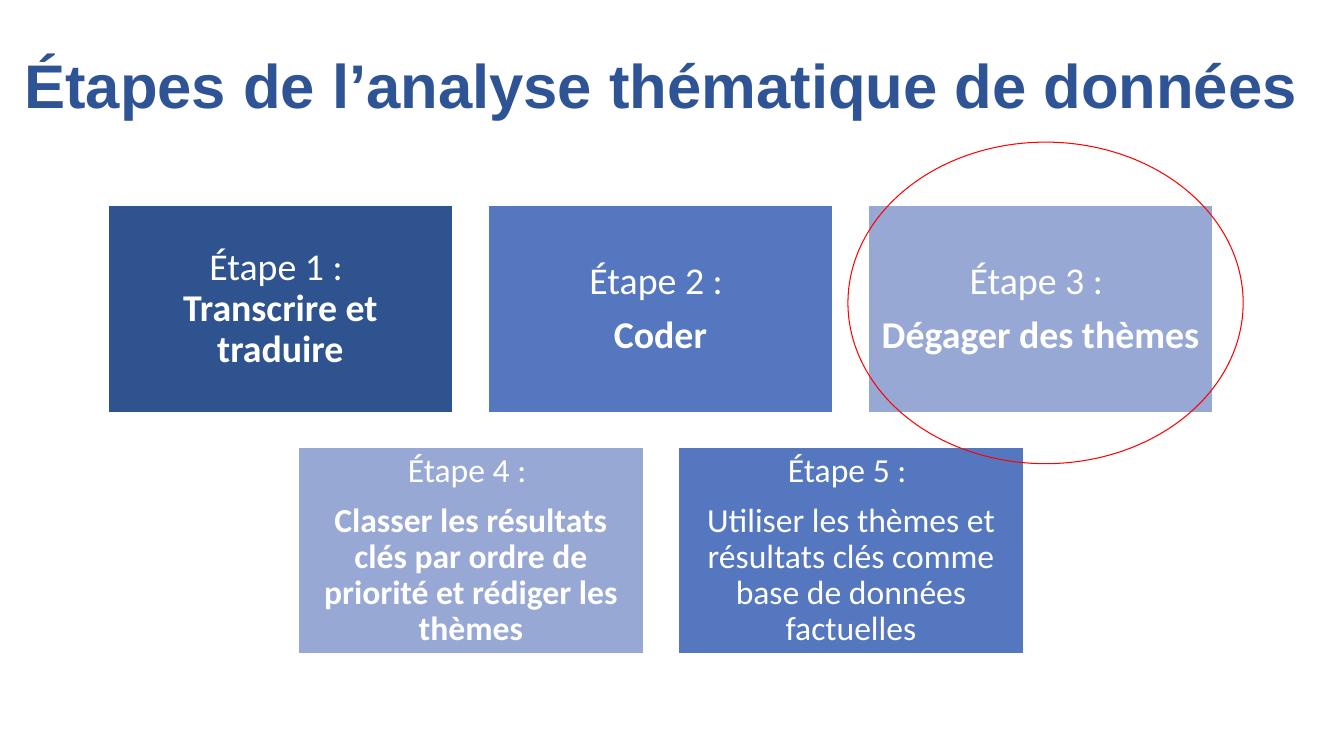
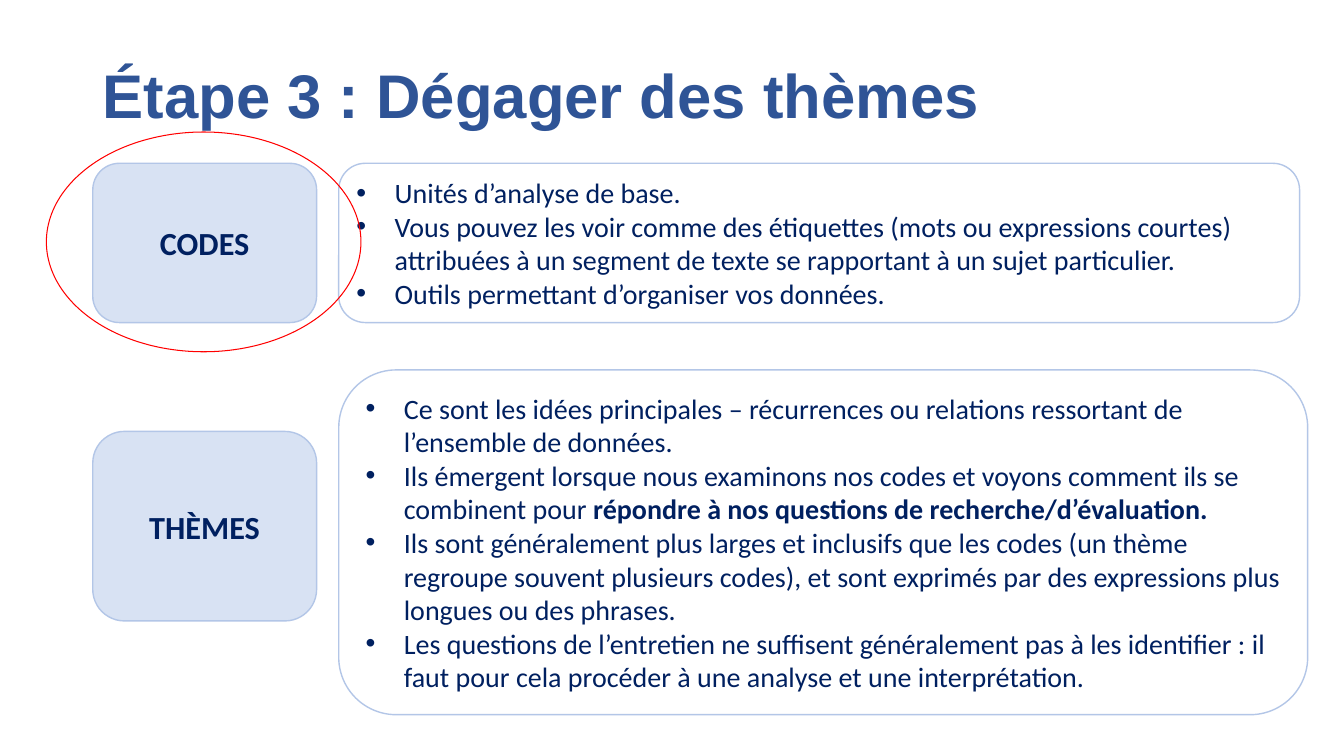
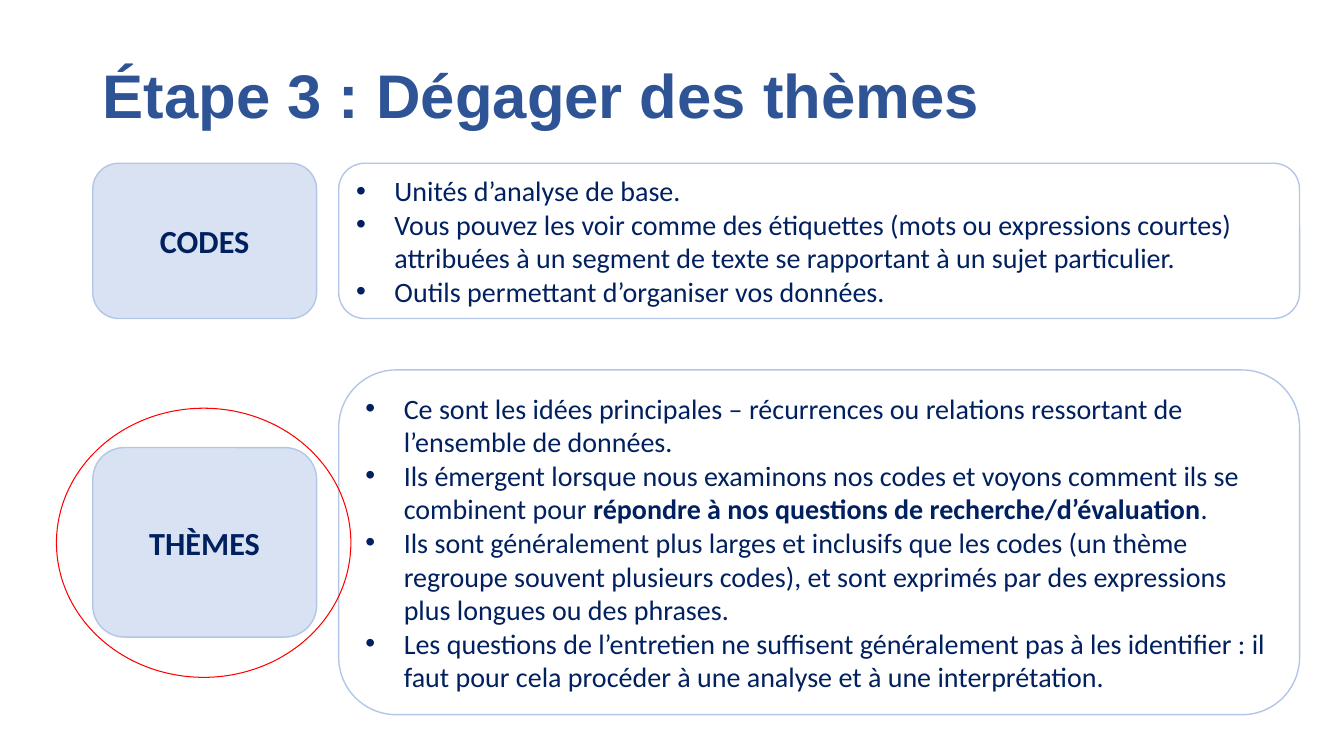
from dataclasses import dataclass

from lxml import etree
from pptx import Presentation
from pptx.dml.color import RGBColor
from pptx.enum.shapes import MSO_SHAPE
from pptx.enum.text import MSO_ANCHOR, MSO_AUTO_SIZE, PP_ALIGN
from pptx.oxml.ns import qn
from pptx.util import Pt

# Scale: 100 px to the inch
EMU_PER_PX = 9144
SLIDE_WIDTH, SLIDE_HEIGHT = 1333, 750
TITLE_ONLY_LAYOUT = 5

# Shared look
RECTANGLE = MSO_SHAPE.RECTANGLE
ROUNDED = MSO_SHAPE.ROUNDED_RECTANGLE
OVAL = MSO_SHAPE.OVAL
MIDDLE = MSO_ANCHOR.MIDDLE
LEFT, CENTER = PP_ALIGN.LEFT, PP_ALIGN.CENTER
NO_AUTOFIT = MSO_AUTO_SIZE.NONE

TITLE_FONT, BODY_FONT = "Arial", "Calibri"
TITLE_BLUE = RGBColor(0x2F, 0x54, 0x96)
DARK_BLUE = RGBColor(0x2E, 0x53, 0x8F)
MID_BLUE = RGBColor(0x54, 0x77, 0xC0)
SOFT_BLUE = RGBColor(0x97, 0xA8, 0xD5)
PALE_BLUE = RGBColor(0xD8, 0xE2, 0xF3)
OUTLINE_BLUE = RGBColor(0xB3, 0xC6, 0xE7)
NAVY = RGBColor(0x00, 0x20, 0x60)
WHITE = RGBColor(0xFF, 0xFF, 0xFF)
RED = RGBColor(0xFF, 0x00, 0x00)


@dataclass(frozen=True)
class Box:
    left: int
    top: int
    width: int
    height: int

    def emu(self) -> list[int]:
        return [px * EMU_PER_PX for px in (self.left, self.top, self.width, self.height)]


@dataclass(frozen=True)
class Run:
    text: str
    bold: bool = False


@dataclass(frozen=True)
class Step:
    heading: str
    text: str
    fill: RGBColor
    size: int
    bold: bool = True
    space_before: float = 9.4


@dataclass(frozen=True)
class Topic:
    label: str
    label_box: Box
    detail_box: Box
    bullets: list[list[Run]]


# Drawing functions
def add_title_slide(presentation, title: str, box: Box):
    slide = presentation.slides.add_slide(presentation.slide_layouts[TITLE_ONLY_LAYOUT])
    placeholder = slide.shapes.title
    placeholder.left, placeholder.top, placeholder.width, placeholder.height = box.emu()
    frame = placeholder.text_frame
    frame.text = title
    frame.auto_size = NO_AUTOFIT
    frame.word_wrap = True
    frame.vertical_anchor = MIDDLE
    paragraph = frame.paragraphs[0]
    paragraph.alignment = LEFT
    paragraph.line_spacing = 0.9
    style_font(paragraph.font, 44, TITLE_BLUE, TITLE_FONT, True)
    return slide


def style_font(font, size: int, color: RGBColor, name: str = BODY_FONT, bold: bool = False) -> None:
    font.size, font.name, font.bold = Pt(size), name, bold
    font.color.rgb = color


def add_box(slide, kind, box: Box, fill: RGBColor | None, line: RGBColor,
            line_width: float = 1, inset: int = 10):
    shape = slide.shapes.add_shape(kind, *box.emu())
    shape.shadow.inherit = False
    if fill is None:
        shape.fill.background()
    else:
        shape.fill.solid()
        shape.fill.fore_color.rgb = fill
    shape.line.color.rgb = line
    shape.line.width = Pt(line_width)
    frame = shape.text_frame
    frame.word_wrap = True
    frame.vertical_anchor = MIDDLE
    frame.margin_left = frame.margin_right = inset * EMU_PER_PX
    return shape


def add_highlight(slide, box: Box) -> None:
    add_box(slide, OVAL, box, None, RED, 0.75)


def add_bullet(paragraph, indent: int, color: RGBColor) -> None:
    properties = paragraph._p.get_or_add_pPr()
    properties.set("marL", str(indent * EMU_PER_PX))
    properties.set("indent", str(-indent * EMU_PER_PX))
    bullet_color = etree.SubElement(properties, qn("a:buClr"))
    etree.SubElement(bullet_color, qn("a:srgbClr"), val=str(color))
    etree.SubElement(properties, qn("a:buFont"), typeface=TITLE_FONT)
    etree.SubElement(properties, qn("a:buChar"), char="•")


def add_step(slide, step: Step, box: Box) -> None:
    shape = add_box(slide, RECTANGLE, box, step.fill, WHITE, inset=11)
    frame = shape.text_frame
    frame.margin_top = frame.margin_bottom = 11 * EMU_PER_PX
    heading, body = frame.paragraphs[0], frame.add_paragraph()
    body.space_before = Pt(step.space_before)
    for paragraph, text, bold in ((heading, step.heading, False), (body, step.text, step.bold)):
        paragraph.add_run().text = text
        paragraph.alignment = CENTER
        paragraph.line_spacing = 0.9
        style_font(paragraph.font, step.size, WHITE, bold=bold)


def add_label(slide, text: str, box: Box) -> None:
    shape = add_box(slide, ROUNDED, box, PALE_BLUE, OUTLINE_BLUE)
    paragraph = shape.text_frame.paragraphs[0]
    paragraph.add_run().text = text
    paragraph.alignment = CENTER
    style_font(paragraph.font, 23, NAVY, bold=True)


def add_details(slide, bullets: list[list[Run]], box: Box) -> None:
    frame = add_box(slide, ROUNDED, box, None, OUTLINE_BLUE).text_frame
    for index, runs in enumerate(bullets):
        paragraph = frame.add_paragraph() if index else frame.paragraphs[0]
        paragraph.alignment = LEFT
        add_bullet(paragraph, 38, NAVY)
        style_font(paragraph.font, 20, NAVY)
        for part in runs:
            run = paragraph.add_run()
            run.text = part.text
            if part.bold:
                run.font.bold = True


# Slide 1: the five steps, in centred rows
STEP_WIDTH, STEP_HEIGHT, STEP_GAP = 342, 205, 35
STEPS_CENTER, STEPS_TOP = 655, 204
STEP_ROWS = [
    [
        Step("Étape 1 : ", "Transcrire et traduire", DARK_BLUE, 27, space_before=0),
        Step("Étape 2 : ", "Coder", MID_BLUE, 27),
        Step("Étape 3 : ", "Dégager des thèmes ", SOFT_BLUE, 27),
    ],
    [
        Step("Étape 4 : ", "Classer les résultats clés par ordre de priorité et rédiger les thèmes",
             SOFT_BLUE, 24),
        Step("Étape 5 : ", "Utiliser les thèmes et résultats clés comme base de données factuelles",
             MID_BLUE, 24, bold=False),
    ],
]


def build_steps_slide(presentation) -> None:
    slide = add_title_slide(presentation, "Étapes de l’analyse thématique de données",
                            Box(14, 15, 1316, 145))
    for row, steps in enumerate(STEP_ROWS):
        row_width = len(steps) * (STEP_WIDTH + STEP_GAP) - STEP_GAP
        row_left = STEPS_CENTER - row_width // 2
        top = STEPS_TOP + row * (STEP_HEIGHT + STEP_GAP)
        for column, step in enumerate(steps):
            left = row_left + column * (STEP_WIDTH + STEP_GAP)
            add_step(slide, step, Box(left, top, STEP_WIDTH, STEP_HEIGHT))
    add_highlight(slide, Box(841, 141, 392, 319))


# Slides 2 and 3: codes against themes
LABEL_LEFT, LABEL_WIDTH = 92, 222
DETAIL_LEFT, DETAIL_WIDTH = 336, 953
CODES_TOP = 162

CODE_BULLETS = [
    [Run("Unités d’analyse de base.")],
    [Run("Vous pouvez les voir comme des étiquettes (mots ou expressions courtes) "
         "attribuées à un segment de texte se rapportant à un sujet particulier.")],
    [Run("Outils permettant d’organiser vos données.")],
]


def theme_bullets(answer: list[Run], ending: str) -> list[list[Run]]:
    return [
        [Run("Ce sont les idées principales – récurrences ou relations ressortant de "
             "l’ensemble de données.")],
        [Run("Ils émergent lorsque nous examinons nos codes et voyons comment ils se "
             "combinent pour "), *answer],
        [Run("Ils sont généralement plus larges et inclusifs que les codes (un thème regroupe "
             "souvent plusieurs codes), et sont exprimés par des expressions plus longues "
             "ou des phrases.")],
        [Run("Les questions de l’entretien ne suffisent généralement pas à les identifier : il "
             f"faut pour cela procéder à une analyse et {ending}")],
    ]


def codes_topic(height: int) -> Topic:
    return Topic("CODES", Box(LABEL_LEFT, CODES_TOP, LABEL_WIDTH, height),
                 Box(DETAIL_LEFT, CODES_TOP, DETAIL_WIDTH, height), CODE_BULLETS)


def themes_topic(label_top: int, detail_width: int, bullets: list[list[Run]]) -> Topic:
    return Topic("THÈMES", Box(LABEL_LEFT, label_top, LABEL_WIDTH, 188),
                 Box(DETAIL_LEFT, 367, detail_width, 342), bullets)


def build_topics_slide(presentation, topics: list[Topic], highlight: Box) -> None:
    slide = add_title_slide(presentation, "Étape 3 : Dégager des thèmes", Box(92, 41, 1150, 113))
    for topic in topics:
        add_label(slide, topic.label, topic.label_box)
        add_details(slide, topic.bullets, topic.detail_box)
    add_highlight(slide, highlight)


def main() -> None:
    presentation = Presentation()
    presentation.slide_width = SLIDE_WIDTH * EMU_PER_PX
    presentation.slide_height = SLIDE_HEIGHT * EMU_PER_PX

    build_steps_slide(presentation)

    answer = "répondre à nos questions de recherche/d’évaluation"
    codes_focus = theme_bullets([Run(answer + ".", True)], "une interprétation.")
    build_topics_slide(presentation, [codes_topic(158), themes_topic(428, 961, codes_focus)],
                       Box(46, 131, 312, 218))

    themes_focus = theme_bullets([Run(answer, True), Run(".")], "à une interprétation.")
    build_topics_slide(presentation, [codes_topic(154), themes_topic(444, DETAIL_WIDTH, themes_focus)],
                       Box(56, 405, 292, 267))

    presentation.save("out.pptx")


if __name__ == "__main__":
    main()
